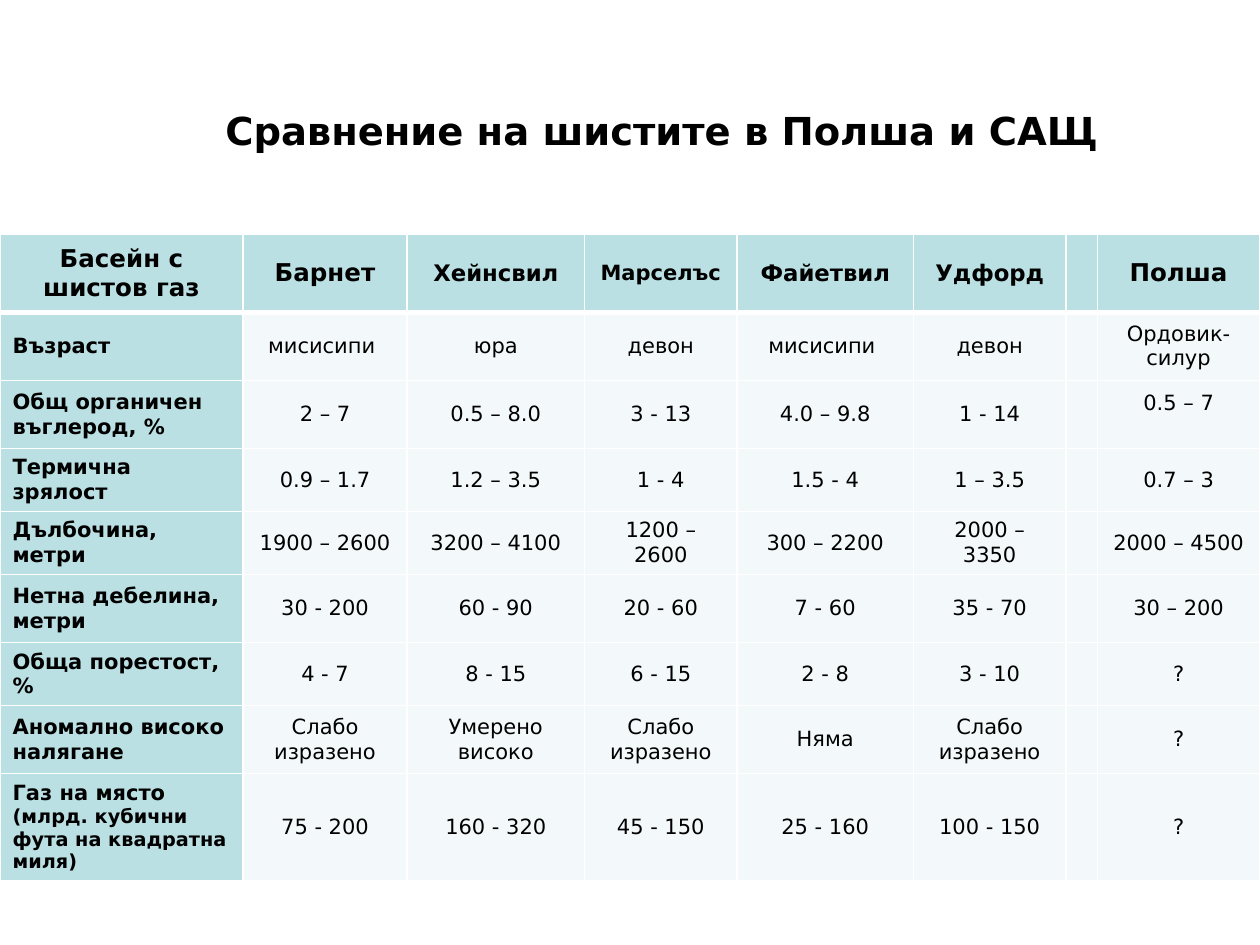
from pptx import Presentation
from pptx.dml.color import RGBColor
from pptx.enum.text import MSO_ANCHOR, PP_ALIGN
from pptx.oxml import parse_xml
from pptx.oxml.ns import nsdecls
from pptx.util import Inches, Pt

FONT = "DejaVu Sans"
COLORS = {"text": "000000", "head": "BBE0E3", "body": "F3F9FA", "rule": "FFFFFF"}
WIDTHS = [1.93, 1.3, 1.41, 1.21, 1.4, 1.21, 0.25, 1.29]
HEIGHTS = [0.62, 0.54, 0.54, 0.49, 0.49, 0.54, 0.49, 0.54, 0.84]
SIZES = [14, 14, 13, 12, 13, 13, 12, 14]
ROWS = [
    ["Басейн с шистов газ", "Барнет", "Хейнсвил", "Марселъс", "Файетвил", "Удфорд", "", "Полша"],
    ["Възраст", "мисисипи ", "юра", "девон", "мисисипи ", "девон", "", "Ордовик- силур"],
    ["Общ органичен въглерод, %", "2 – 7", "0.5 – 8.0", "3 - 13", "4.0 – 9.8", "1 - 14", "", "0.5 – 7"],
    ["Термична зрялост", "0.9 – 1.7", "1.2 – 3.5", "1 - 4", "1.5 - 4", "1 – 3.5", "", "0.7 – 3"],
    ["Дълбочина, метри", "1900 – 2600", "3200 – 4100", "1200 – 2600", "300 – 2200", "2000 – 3350", "", "2000 – 4500"],
    ["Нетна дебелина, метри", "30 - 200", "60 - 90", "20 - 60", "7 - 60", "35 - 70", "", "30 – 200"],
    ["Обща порестост, %", "4 - 7", "8 - 15", "6 - 15", "2 - 8", "3 - 10", "", "?"],
    ["Аномално високо налягане", "Слабо изразено", "Умерено високо", "Слабо изразено", "Няма", "Слабо изразено", "", "?"],
    ["Газ на място ", "75 - 200", "160 - 320", "45 - 150", "25 - 160", "100 - 150", "", "?"],
]
UNIT = "(млрд. кубични фута на квадратна миля)"


def style(font, size, bold):
    """Set the face, size, weight and colour of a font."""
    font.name, font.size, font.bold = FONT, Pt(size), bold
    font.color.rgb = RGBColor.from_string(COLORS["text"])


def add_title(slide, left, top, width, height):
    """Place the slide title in the given box."""
    frame = slide.shapes.add_textbox(left, top, width, height).text_frame
    frame.word_wrap = True
    frame.vertical_anchor = MSO_ANCHOR.MIDDLE
    para = frame.paragraphs[0]
    para.text = "Сравнение на шистите в Полша и САЩ"
    style(para.font, 22, True)


def add_rules(cell, row):
    """Draw the white borders of a cell, thick below the header."""
    props = cell._tc.get_or_add_tcPr()
    widths = {"L": 1, "R": 1, "T": 3 if row == 1 else 1, "B": 3 if row == 0 else 1}
    for i, (side, width) in enumerate(widths.items()):
        props.insert(i, parse_xml(
            f'<a:ln{side} {nsdecls("a")} w="{Pt(width)}"><a:solidFill>'
            f'<a:srgbClr val="{COLORS["rule"]}"/></a:solidFill></a:ln{side}>'))


def fill_cell(cell, text, row, col):
    """Write and style one cell by its place in the grid."""
    head = row == 0 or col == 0
    cell.fill.solid()
    cell.fill.fore_color.rgb = RGBColor.from_string(COLORS["head" if head else "body"])
    add_rules(cell, row)
    cell.vertical_anchor = MSO_ANCHOR.MIDDLE
    cell.margin_left = cell.margin_right = Inches(0.1)
    cell.margin_top = cell.margin_bottom = Inches(0.05 if row else 0.02)
    para = cell.text_frame.paragraphs[0]
    para.text = text
    para.alignment = PP_ALIGN.LEFT if row and col == 0 else PP_ALIGN.CENTER
    style(para.font, 12 if row else SIZES[col], head)


def add_grid(slide, left, top, width, height):
    """Place the comparison table in the given box."""
    frame = slide.shapes.add_table(len(ROWS), len(WIDTHS), left, top, width, height)
    table = frame.table
    table.horz_banding = False
    for col, size in zip(table.columns, WIDTHS):
        col.width = Inches(size)
    for row, size in zip(table.rows, HEIGHTS):
        row.height = Inches(size)
    for r, row in enumerate(ROWS):
        for c, text in enumerate(row):
            fill_cell(table.cell(r, c), text, r, c)
    table.cell(2, 7).margin_bottom = Inches(0.23)
    run = table.cell(8, 0).text_frame.paragraphs[0].add_run()
    run.text = UNIT
    run.font.size = Pt(11)


def main():
    """Build and save the slide."""
    deck = Presentation()
    deck.slide_width, deck.slide_height = Inches(10), Inches(7.5)
    slide = deck.slides.add_slide(deck.slide_layouts[6])
    add_title(slide, Inches(1.69), Inches(0.52), Inches(7.81), Inches(1.03))
    add_grid(slide, Inches(0), Inches(1.86), Inches(sum(WIDTHS)), Inches(sum(HEIGHTS)))
    deck.save("out.pptx")


if __name__ == "__main__":
    main()
